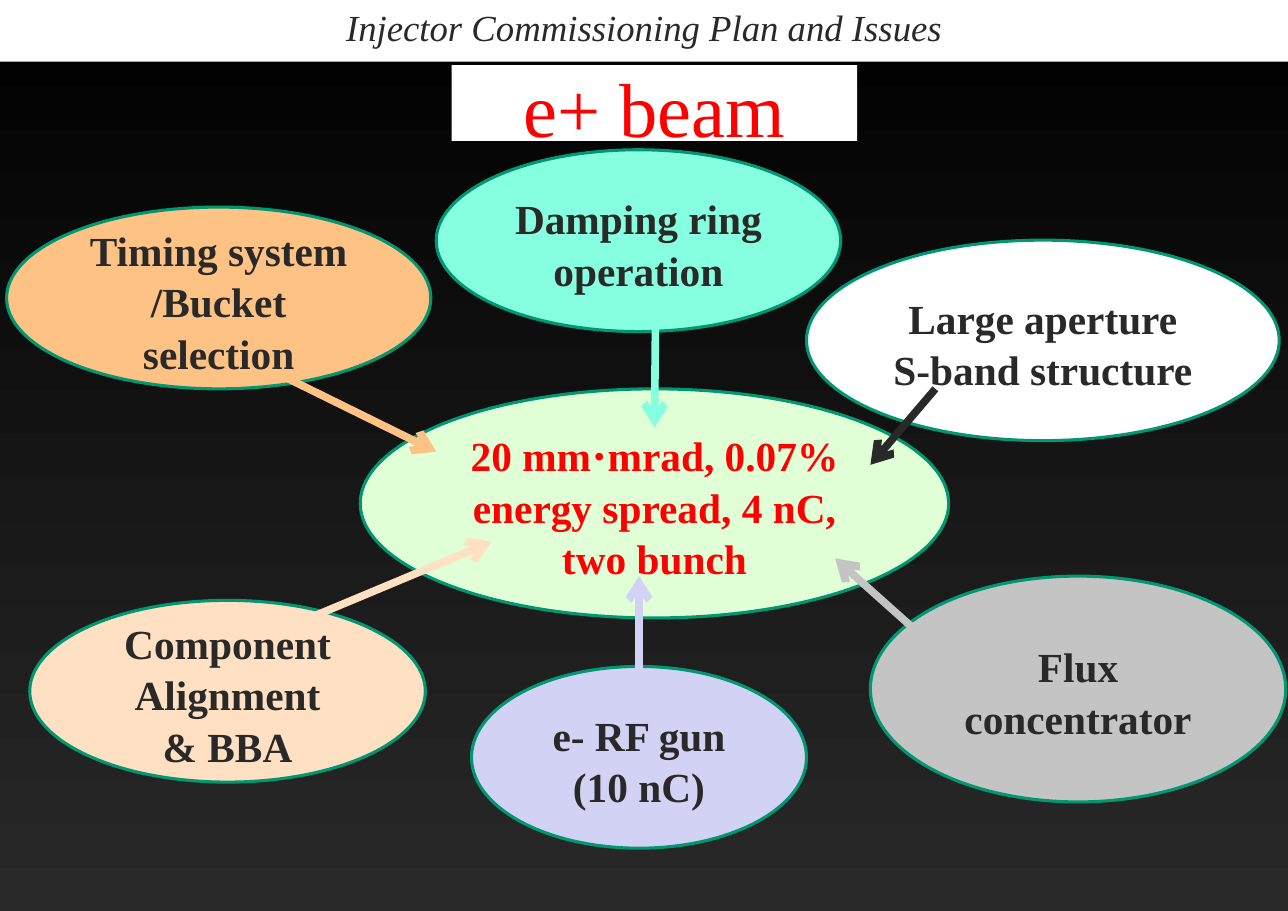
from lxml.etree import SubElement
from pptx import Presentation
from pptx.dml.color import RGBColor
from pptx.enum.shapes import MSO_CONNECTOR as Link, MSO_SHAPE as Preset
from pptx.enum.text import MSO_ANCHOR as Anchor, MSO_AUTO_SIZE as Fit, PP_ALIGN as Align
from pptx.oxml.ns import qn
from pptx.util import Inches, Pt

# The slide is a grid of 116.9 columns by 82.7 rows
CELL = Inches(0.1)
COLUMNS, ROWS = 116.9, 82.7
WHITE, INK, RED, GREEN = "FFFFFF", "292929", "FF0000", "009771"


def cells(*counts):
    return [round(count * CELL) for count in counts]


def colour(value):
    return RGBColor.from_string(value)


def write(shape, text, size=27, ink=INK, bold=False, italic=False,
          anchor=Anchor.MIDDLE, top=0.1, spacing=1.04):
    frame = shape.text_frame
    frame.word_wrap = True
    frame.auto_size = Fit.NONE
    frame.vertical_anchor = anchor
    frame.margin_left = frame.margin_right = Inches(0.11)
    frame.margin_top, frame.margin_bottom = Inches(top), Inches(0.06)
    frame.text = text
    for paragraph in frame.paragraphs:
        paragraph.alignment = Align.CENTER
        paragraph.line_spacing = spacing
        paragraph.space_before = Pt(0)
        font = paragraph.font
        font.name, font.size = "Times New Roman", Pt(size)
        font.bold, font.italic = bold, italic
        font.color.rgb = colour(ink)


class Diagram:
    def __init__(self, slide):
        self.slide = slide
        self.shapes = slide.shapes

    def background(self, first, last):
        fill = self.slide.background.fill
        fill.gradient()
        fill.gradient_angle = 270
        for stop, position, shade in zip(fill.gradient_stops, (0, 1), (first, last)):
            stop.position = position
            stop.color.rgb = colour(shade)

    def banner(self, text, height):
        strip = self.shapes.add_shape(Preset.RECTANGLE, *cells(0, 0, COLUMNS, height))
        strip.shadow.inherit = False
        strip.fill.solid()
        strip.fill.fore_color.rgb = colour(WHITE)
        strip.line.fill.background()
        write(strip, text, size=24, italic=True, anchor=Anchor.TOP, top=0.04, spacing=1)

    def title(self, text, box):
        heading = self.shapes.title
        heading.left, heading.top, heading.width, heading.height = cells(*box)
        heading.fill.solid()
        heading.fill.fore_color.rgb = colour(WHITE)
        write(heading, text, size=50, ink=RED)

    def ellipse(self, text, box, fill, ink=INK):
        oval = self.shapes.add_shape(Preset.OVAL, *cells(*box))
        oval.shadow.inherit = False
        oval.fill.solid()
        oval.fill.fore_color.rgb = colour(fill)
        oval.line.color.rgb = colour(GREEN)
        oval.line.width = Pt(2)
        write(oval, text, ink=ink, bold=True)

    def arrow(self, start, end, shade):
        link = self.shapes.add_connector(Link.STRAIGHT, *cells(*start, *end))
        link.line.color.rgb = colour(shade)
        link.line.width = Pt(5)
        SubElement(link.line._get_or_add_ln(), qn("a:tailEnd"), type="arrow")
        SubElement(link._element.spPr, qn("a:effectLst"))


# Factors: text, ellipse box, fill, arrow start, arrow end, arrow colour
FACTORS = [
    ("Component Alignment\n& BBA", (2.7, 54.5, 35.9, 16.5), "FFE0C2",
     (28.1, 56.1), (44.6, 49.2), "FFE0C2"),
    ("e- RF gun\n(10 nC)", (42.8, 60.5, 30.4, 16.5), "D2D2F4",
     (58, 62.5), (58, 52.3), "D2D2F4"),
    ("Flux concentrator", (79, 52.3, 37.7, 20.5), "C4C4C4",
     (85.1, 59), (75.8, 50.7), "C4C4C4"),
    ("Large aperture\nS-band structure", (73.2, 21.8, 42.9, 18.2), WHITE,
     (84.9, 35.3), (79, 42.2), INK),
    ("Damping ring operation", (39.6, 13.6, 36.7, 16.5), "85FFE0",
     (59.5, 28.8), (59.4, 38.8), "85FFE0"),
    ("Timing system\n/Bucket selection", (0.6, 18.8, 38.5, 16.5), "FFC285",
     (26.2, 34.4), (39.6, 41), "FFC285"),
]


def main():
    deck = Presentation()
    deck.slide_width, deck.slide_height = cells(COLUMNS, ROWS)
    diagram = Diagram(deck.slides.add_slide(deck.slide_layouts[5]))

    # Background, header strip and title
    diagram.background("000000", INK)
    diagram.banner("Injector Commissioning Plan and Issues", 5.6)
    diagram.title("e+ beam", (41, 5.9, 36.8, 6.9))

    # Beam goal in the centre
    diagram.ellipse("20 mm⋅mrad, 0.07% energy spread, 4 nC, two bunch",
                    (32.7, 35.3, 53.4, 20.8), "E0FFD6", ink=RED)

    # Factors around it, each pointing at the goal
    for text, box, fill, start, end, shade in FACTORS:
        diagram.ellipse(text, box, fill)
        diagram.arrow(start, end, shade)

    deck.save("out.pptx")


if __name__ == "__main__":
    main()
